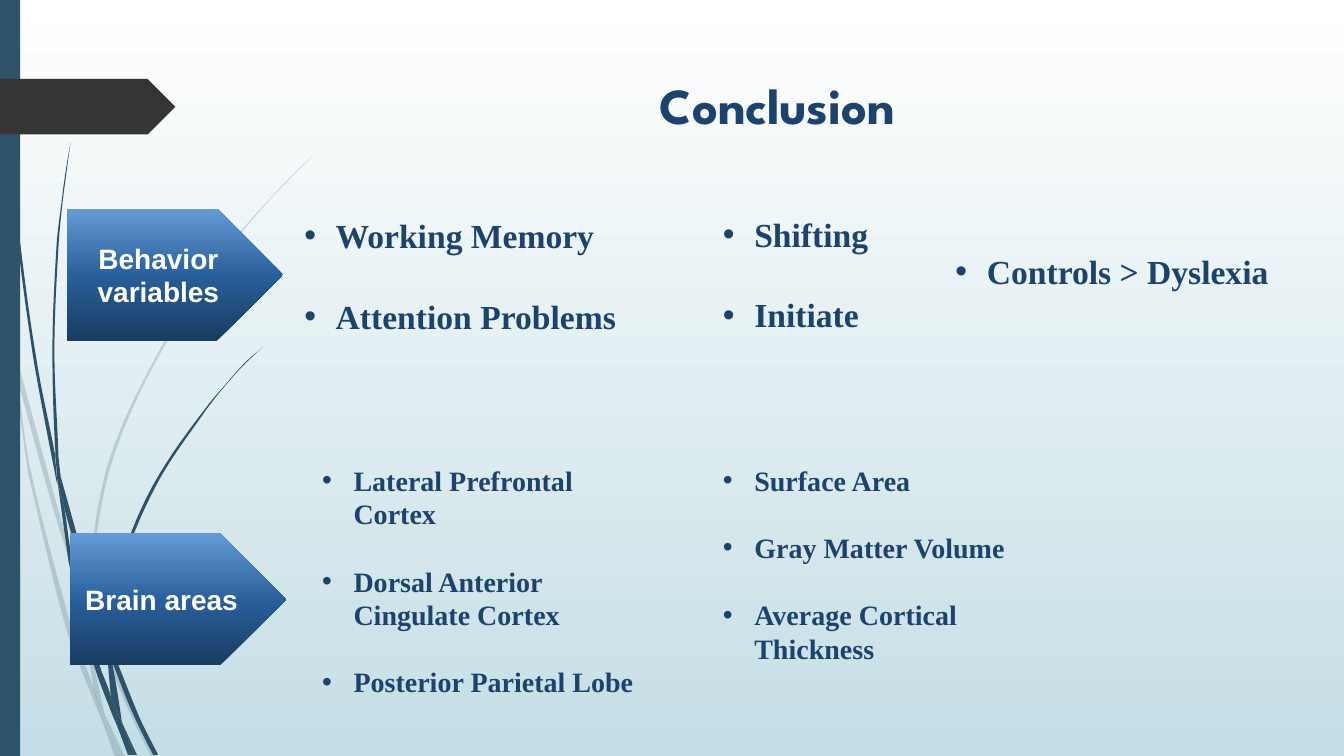
import math

import pptx
import pptx.util
import pptx.dml.color
import pptx.enum.shapes
import pptx.enum.text
import pptx.oxml.ns
from lxml import etree

Cm = pptx.util.Cm
Pt = pptx.util.Pt
qn = pptx.oxml.ns.qn

COLORS = {
    "navy": "1C436D", "teal": "2E5369", "charcoal": "353535", "white": "FFFFFF",
    "mist": "C5DEE5", "plate_low": "193C61", "plate_mid": "285E99", "plate_high": "649AD6",
}
BACKGROUND_STOPS = [(0, "white"), (100, "mist")]
PLATE_STOPS = [(0, "plate_low"), (48, "plate_mid"), (100, "plate_high")]
LINE_HEIGHT = 1.2

# Each grass blade has two curved edges; the second runs back to the start of the first.
BLADE_GRID = Cm(2.54) // 100
PALE_BLADES = [
    ([(0, 282), (9, 322), (11, 350)], [(10, 344), (0, 299)]),
    ([(14, 345), (62, 520), (85, 586)], [(84, 599), (58, 522), (17, 376)]),
    ([(88, 596), (92, 607), (127, 692), (155, 751)], [(150, 751), (123, 694), (88, 610)]),
    ([(105, 711), (124, 751)], [(119, 751)]),
    ([(11, 350), (17, 376), (31, 469), (70, 619), (93, 683), (99, 707), (101, 714)],
     [(92, 693), (65, 621), (28, 470)]),
    ([(84, 599), (88, 608), (91, 646), (103, 706), (105, 711)],
     [(96, 692), (93, 683), (87, 646)]),
    ([(312, 153), (289, 175), (268, 197), (228, 244), (158, 348), (107, 461), (85, 584),
      (85, 586)],
     [(88, 596), (88, 584), (110, 462), (160, 349), (229, 245), (268, 198), (290, 175)]),
    ([(101, 714), (119, 751)], [(114, 751)]),
    ([(88, 610), (88, 596)], [(85, 586), (84, 599)]),
    ([(93, 683), (96, 692), (105, 711), (119, 751)], [(101, 714), (99, 707)]),
]
DARK_BLADES = [
    ([(3, 0), (4, 48), (7, 110), (17, 233), (33, 355), (56, 477), (57, 481)],
     [(55, 457), (55, 453), (36, 355), (19, 232), (8, 109), (5, 48), (4, 0)]),
    ([(60, 472), (93, 590), (106, 631), (106, 645)], [(88, 592), (64, 505)]),
    ([(110, 641), (113, 649), (136, 706), (157, 749)], [(152, 749), (132, 708), (111, 656)]),
    ([(57, 477), (64, 505), (72, 556), (98, 657), (110, 691), (116, 717), (117, 722)],
     [(111, 708), (93, 659), (68, 557)]),
    ([(70, 141), (62, 193), (56, 245), (52, 349), (55, 449), (60, 472)],
     [(58, 453), (54, 349), (58, 245), (63, 193)]),
    ([(122, 719), (136, 749)], [(133, 749)]),
    ([(55, 449), (60, 472), (64, 505)], [(57, 477), (55, 453)]),
    ([(261, 344), (245, 358), (231, 373), (204, 405), (156, 474), (122, 551), (106, 631)],
     [(110, 641), (111, 633), (125, 552), (158, 476), (205, 406), (231, 374), (245, 359)]),
    ([(117, 722), (131, 749)], [(127, 749)]),
    ([(106, 645), (109, 651), (111, 656), (121, 716), (122, 719)], [(116, 706), (110, 691)]),
    ([(106, 645), (106, 631)], [(110, 641), (111, 656)]),
    ([(110, 691), (116, 706), (122, 719), (133, 749)], [(131, 749), (117, 722), (116, 717)]),
]

# Left, top, width, height in centimetres; text size; items.
BULLET_LISTS = [
    (7.42, 5.29, 8.79, 4.37, 24, ["Working Memory", "Attention Problems"]),
    (17.97, 5.26, 4.62, 3.33, 24, ["Shifting", "Initiate"]),
    (23.83, 6.2, 9.53, 1.27, 24, ["Controls > Dyslexia"]),
    (7.87, 11.55, 8.74, 7.09, 20,
     ["Lateral Prefrontal Cortex", "Dorsal Anterior Cingulate Cortex", "Posterior Parietal Lobe"]),
    (17.97, 11.55, 8.74, 7.95, 20,
     ["Surface Area", "Gray Matter Volume", "Average Cortical Thickness"]),
]


def rgb(name):
    return pptx.dml.color.RGBColor.from_string(COLORS[name])


def set_gradient(fill, element, stops, angle):
    """Give fill, held somewhere in element, a linear gradient of (percent, color) stops."""
    fill.gradient()
    fill.gradient_angle = angle
    stop_list = element.find(".//" + qn("a:gsLst"))
    for old_stop in list(stop_list):
        stop_list.remove(old_stop)
    for percent, color in stops:
        stop = etree.SubElement(stop_list, qn("a:gs"), pos=str(percent * 1000))
        etree.SubElement(stop, qn("a:srgbClr"), val=COLORS[color])


def paint(shape, color, opacity=100):
    shape.shadow.inherit = False
    shape.line.fill.background()
    shape.fill.solid()
    shape.fill.fore_color.rgb = rgb(color)
    if opacity < 100:
        color_element = shape._element.spPr.find(".//" + qn("a:srgbClr"))
        etree.SubElement(color_element, qn("a:alpha"), val=str(opacity * 1000))


def add_run(paragraph, text, font_name, size, color):
    run = paragraph.add_run()
    run.text = text
    run.font.color.rgb = rgb(color)
    for attribute, value in {"name": font_name, "size": Pt(size), "bold": True}.items():
        setattr(run.font, attribute, value)


def edge_controls(edge):
    """Return, for each span of the edge, the two control points of a smooth curve."""
    padded = [edge[0], *edge, edge[-1]]
    headings = [math.atan2(after[1] - before[1], after[0] - before[0])
                for before, after in zip(padded, padded[2:])]
    controls = []
    for index, (start, end) in enumerate(zip(edge, edge[1:])):
        reach = math.dist(start, end) / 3
        controls.append([
            (point[0] + sign * reach * math.cos(heading),
             point[1] + sign * reach * math.sin(heading))
            for point, heading, sign in ((start, headings[index], 1),
                                         (end, headings[index + 1], -1))])
    return controls


def add_blade(slide, edges, opacity):
    outline = edges[0] + edges[1]
    builder = slide.shapes.build_freeform(*outline[0], scale=BLADE_GRID)
    builder.add_line_segments(outline[1:], close=True)
    shape = builder.convert_to_shape()
    left, top = (min(values) for values in zip(*outline))
    spans = [*edge_controls(edges[0]), None, *edge_controls(edges[1])]
    for line, controls in zip(list(shape._element.iter(qn("a:lnTo"))), spans):
        if controls:
            line.tag = qn("a:cubicBezTo")
            for position, (x, y) in enumerate(controls):
                point = etree.Element(qn("a:pt"), x=str(round(x - left)), y=str(round(y - top)))
                line.insert(position, point)
    scale_path(shape)
    paint(shape, "teal", opacity)


def scale_path(shape):
    """Express the outline in lengths of the slide, so that it keeps its shape when drawn."""
    outline = shape._element.find(".//" + qn("a:pathLst"))[0]
    for element in outline.iter():
        for key, value in element.attrib.items():
            if key in ("x", "y", "w", "h"):
                element.set(key, str(int(value) * BLADE_GRID))


def add_preset(slide, kind, box, color):
    shape = slide.shapes.add_shape(kind, *map(Cm, box))
    paint(shape, color)
    return shape


def add_label_plate(slide, left, top, text):
    plate = add_preset(slide, pptx.enum.shapes.MSO_SHAPE.PENTAGON,
                       (left, top, 5.44, 3.33), "plate_mid")
    set_gradient(plate.fill, plate._element, PLATE_STOPS, 90)
    frame = plate.text_frame
    frame.word_wrap = True
    frame.vertical_anchor = pptx.enum.text.MSO_ANCHOR.MIDDLE
    paragraph = frame.paragraphs[0]
    paragraph.alignment = pptx.enum.text.PP_ALIGN.CENTER
    add_run(paragraph, text, "Arial", 20, "white")


def add_text_frame(slide, box):
    frame = slide.shapes.add_textbox(*map(Cm, box)).text_frame
    frame.word_wrap = True
    return frame


def add_title(slide, text):
    paragraph = add_text_frame(slide, (7.21, 1.75, 24.77, 3.56)).paragraphs[0]
    paragraph.alignment = pptx.enum.text.PP_ALIGN.CENTER
    add_run(paragraph, text, "League Spartan", 36, "navy")


def add_bullet(paragraph):
    properties = paragraph._p.get_or_add_pPr()
    properties.set("marL", str(Cm(0.79)))
    properties.set("indent", str(-Cm(0.79)))
    bullet_color = etree.SubElement(properties, qn("a:buClr"))
    etree.SubElement(bullet_color, qn("a:srgbClr"), val=COLORS["navy"])
    etree.SubElement(properties, qn("a:buFont"), typeface="Arial")
    etree.SubElement(properties, qn("a:buChar"), char="•")


def add_bullet_list(slide, box, size, items):
    frame = add_text_frame(slide, box)
    for index, item in enumerate(items):
        paragraph = frame.add_paragraph() if index else frame.paragraphs[0]
        add_bullet(paragraph)
        paragraph.line_spacing = Pt(size * LINE_HEIGHT)
        if index:
            paragraph.space_before = Pt(size * LINE_HEIGHT)
        add_run(paragraph, item, "Times New Roman", size, "navy")


def main():
    presentation = pptx.Presentation()
    presentation.slide_width = Cm(33.87)
    presentation.slide_height = Cm(19.05)
    slide = presentation.slides.add_slide(presentation.slide_layouts[6])
    set_gradient(slide.background.fill, slide.element, BACKGROUND_STOPS, 270)

    for blades, opacity in ((PALE_BLADES, 20), (DARK_BLADES, 100)):
        for edges in blades:
            add_blade(slide, edges, opacity)
    presets = pptx.enum.shapes.MSO_SHAPE
    add_preset(slide, presets.RECTANGLE, (0, 0, 0.51, 19.05), "teal")
    add_preset(slide, presets.PENTAGON, (0, 1.99, 4.42, 1.4), "charcoal")

    add_title(slide, "Conclusion")
    add_label_plate(slide, 1.69, 5.26, "Behavior variables")
    add_label_plate(slide, 1.77, 13.44, "Brain areas")
    for *box, size, items in BULLET_LISTS:
        add_bullet_list(slide, box, size, items)
    presentation.save("out.pptx")


if __name__ == "__main__":
    main()
